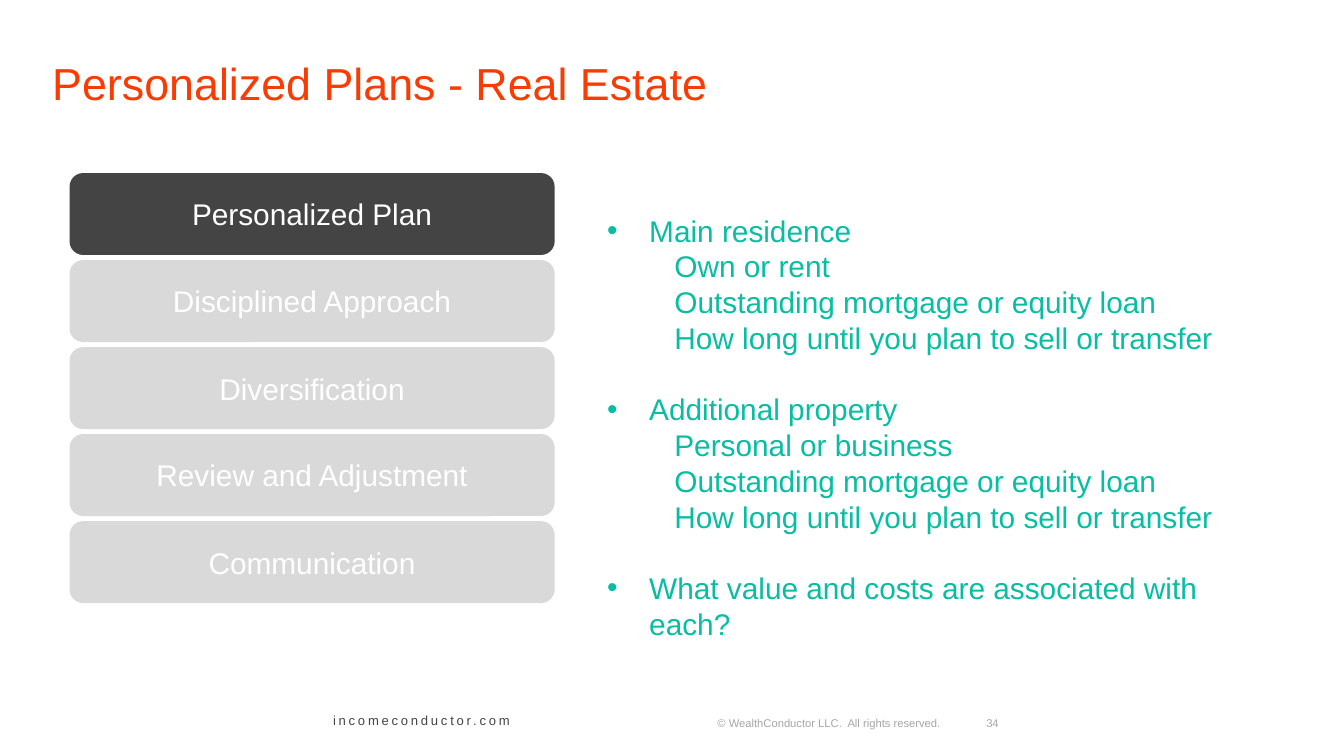
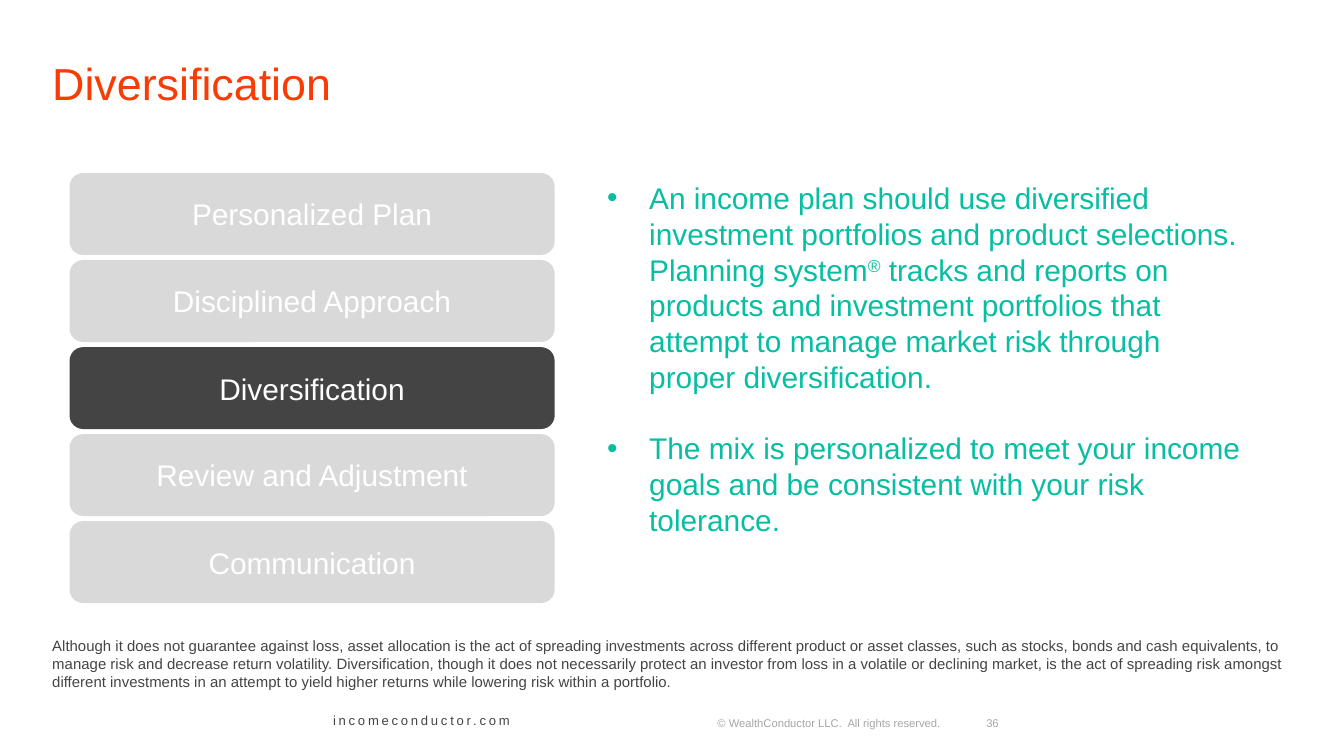
from typing import NamedTuple

from lxml.etree import SubElement
from pptx import Presentation
from pptx.dml.color import RGBColor
from pptx.enum.shapes import MSO_SHAPE
from pptx.enum.text import MSO_ANCHOR, PP_ALIGN
from pptx.oxml.ns import qn
from pptx.slide import Slide
from pptx.text.text import TextFrame
from pptx.util import Pt

SCALE = 2286
FONT = "Arial"
HUES = {
    "title": "F83C04",
    "body": "07BEA2",
    "dark": "434443",
    "pale": "D9D9D9",
    "white": "FFFFFF",
    "faint": "A6A6A6",
}
STEPS = (
    "Personalized Plan",
    "Disciplined Approach",
    "Diversification",
    "Review and Adjustment",
    "Communication",
)


class Box(NamedTuple):
    """Place and size in px."""
    left: int
    top: int
    width: int
    height: int


class Style(NamedTuple):
    """Look of a text."""
    size: int
    hue: str
    space: int = 0
    align: PP_ALIGN = PP_ALIGN.LEFT


class Run(NamedTuple):
    """Piece of text with its raised baseline in percent."""
    text: str
    base: int = 0


class Line(NamedTuple):
    """Paragraph with its indent, bullet, tabs and space before."""
    runs: tuple[Run, ...]
    left: int = 0
    mark: str = ""
    tabs: tuple[int, ...] = ()
    gap: int = 0


class Page(NamedTuple):
    """Content of one slide."""
    title: str
    step: int
    top: int
    height: int
    body: tuple[Line, ...]
    number: int
    note: str = ""


TITLE = Style(24, "title")
BODY = Style(16, "body")
STEP = Style(16, "white", align=PP_ALIGN.CENTER)
NOTE = Style(8, "dark")
SITE = Style(7, "dark", 150)
RIGHTS = Style(6, "faint")


def px(count: int) -> int:
    """Turn px into EMU."""
    return count * SCALE


def plain(text: str) -> Line:
    """Make a line of one run."""
    return Line((Run(text),))


def point(*runs: Run, gap: int = 19) -> Line:
    """Make a bulleted line."""
    return Line(runs, 125, "•", gap=gap)


def group(head: str, *subs: str, gap: int = 19) -> tuple[Line, ...]:
    """Make a bulleted line with lines set in below it."""
    return (point(Run(head), gap=gap), *(Line((Run(sub),), 200) for sub in subs))


def write(frame: TextFrame, lines: tuple[Line, ...], style: Style) -> None:
    """Fill a frame with lines."""
    frame.word_wrap = True
    for index, line in enumerate(lines):
        para = frame.paragraphs[0] if index == 0 else frame.add_paragraph()
        para.alignment = style.align
        para.space_before = Pt(line.gap)
        props = para._p.get_or_add_pPr()
        props.set("marL", str(px(line.left)))
        props.set("indent", str(px(-line.left if line.mark else 0)))
        if line.mark:
            SubElement(props, qn("a:buFont"), typeface=FONT)
            SubElement(props, qn("a:buChar"), char=line.mark)
        if line.tabs:
            stops = SubElement(props, qn("a:tabLst"))
            for stop in line.tabs:
                SubElement(stops, qn("a:tab"), pos=str(px(stop)), algn="r")
        for piece in line.runs:
            run = para.add_run()
            run.text = piece.text
            run.font.name = FONT
            run.font.size = Pt(style.size)
            run.font.color.rgb = RGBColor.from_string(HUES[style.hue])
            traits = run._r.get_or_add_rPr()
            if piece.base:
                traits.set("baseline", str(piece.base * 1000))
            if style.space:
                traits.set("spc", str(style.space))


def label(slide: Slide, box: Box, lines: tuple[Line, ...], style: Style,
          anchor: MSO_ANCHOR = MSO_ANCHOR.TOP) -> None:
    """Add a text box."""
    frame = slide.shapes.add_textbox(*map(px, box)).text_frame
    frame.vertical_anchor = anchor
    write(frame, lines, style)


def stack(slide: Slide, chosen: int) -> None:
    """Draw the steps with the chosen one dark."""
    for index, name in enumerate(STEPS):
        box = Box(207, 515 + 259 * index, 1444, 244)
        shape = slide.shapes.add_shape(MSO_SHAPE.ROUNDED_RECTANGLE, *map(px, box))
        shape.shadow.inherit = False
        shape.fill.solid()
        hue = "dark" if index == chosen else "pale"
        shape.fill.fore_color.rgb = RGBColor.from_string(HUES[hue])
        shape.line.fill.background()
        shape.text_frame.vertical_anchor = MSO_ANCHOR.MIDDLE
        write(shape.text_frame, (plain(name),), STEP)


def frame_page(slide: Slide, page: Page) -> None:
    """Add the footer and title."""
    rights = f"© WealthConductor LLC.  All rights reserved.\t{page.number}"
    line = Line((Run("\t" + rights),), tabs=(1820, 1912))
    label(slide, Box(1896, 2112, 2000, 80), (line,), RIGHTS)
    label(slide, Box(952, 2100, 624, 88), (plain("incomeconductor.com"),), SITE)
    label(slide, Box(116, 112, 3744, 268), (plain(page.title),), TITLE,
          MSO_ANCHOR.MIDDLE)


LOAN = "Outstanding mortgage or equity loan"
TERM = "How long until you plan to sell or transfer"
PAGES = (
    Page(
        "Personalized Plans - Real Estate", 0, 612, 1440,
        (
            *group("Main residence", "Own or rent", LOAN, TERM, gap=0),
            *group("Additional property", "Personal or business", LOAN, TERM),
            point(Run("What value and costs are associated with each?")),
        ),
        34,
    ),
    Page(
        "Diversification", 2, 515, 1224,
        (
            point(
                Run("An income plan should use diversified investment portfolios "
                    "and product selections. Planning system"),
                Run("®", 30),
                Run(" tracks and reports on products and investment portfolios "
                    "that attempt to manage market risk through proper "
                    "diversification."),
                gap=0,
            ),
            point(Run("The mix is personalized to meet your income goals and be "
                      "consistent with your risk tolerance.")),
        ),
        36,
        "Although it does not guarantee against loss, asset allocation is the act "
        "of spreading investments across different product or asset classes, such "
        "as stocks, bonds and cash equivalents, to manage risk and decrease return "
        "volatility. Diversification, though it does not necessarily protect an "
        "investor from loss in a volatile or declining market, is the act of "
        "spreading risk amongst different investments in an attempt to yield higher "
        "returns while lowering risk within a portfolio.",
    ),
)


def main() -> None:
    """Build and save the slides."""
    deck = Presentation()
    deck.slide_width, deck.slide_height = px(4000), px(2250)
    for page in PAGES:
        slide = deck.slides.add_slide(deck.slide_layouts[6])
        frame_page(slide, page)
        stack(slide, page.step)
        label(slide, Box(1768, page.top, 2000, page.height), page.body, BODY)
        if page.note:
            label(slide, Box(116, 1876, 3768, 188), (plain(page.note),), NOTE)
    deck.save("out.pptx")


if __name__ == "__main__":
    main()
